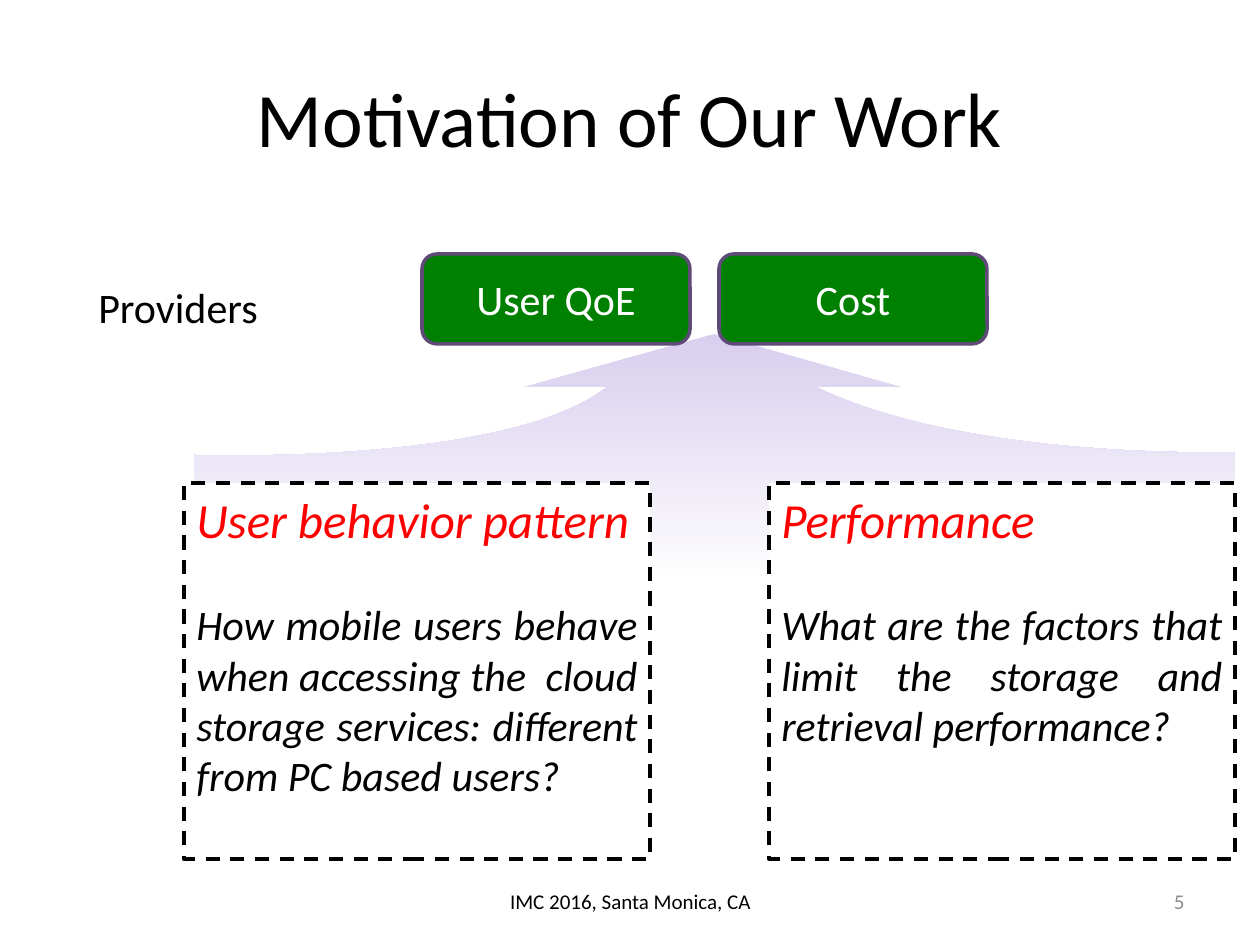
from lxml import etree
from pptx import Presentation
from pptx.dml.color import RGBColor
from pptx.enum.dml import MSO_LINE
from pptx.enum.shapes import MSO_SHAPE
from pptx.enum.text import MSO_ANCHOR, PP_ALIGN
from pptx.oxml.ns import qn
from pptx.util import Pt

SCALE = 914400 / 126  # EMU in one px
LEFT, CENTER, RIGHT, JUSTIFY = (
    PP_ALIGN.LEFT, PP_ALIGN.CENTER, PP_ALIGN.RIGHT, PP_ALIGN.JUSTIFY)
TOP, MIDDLE = MSO_ANCHOR.TOP, MSO_ANCHOR.MIDDLE
RECTANGLE, ROUNDED = MSO_SHAPE.RECTANGLE, MSO_SHAPE.ROUNDED_RECTANGLE
DASH = MSO_LINE.DASH

BLACK = RGBColor(0x00, 0x00, 0x00)
WHITE = RGBColor(0xFF, 0xFF, 0xFF)
GREY = RGBColor(0x8C, 0x8C, 0x8C)
RED = RGBColor(0xFF, 0x00, 0x00)
GREEN = RGBColor(0x00, 0x80, 0x00)
PURPLE = RGBColor(0x5F, 0x4A, 0x78)
LILAC = RGBColor(0xB4, 0x9F, 0xDF)
FONT = "Calibri"

# Content: text, place in px, format
LABELS = [
    ("Motivation of Our Work", (63, 38, 1134, 158), dict(size=44, align=CENTER)),
    ("Providers", (44, 275, 268, 63), dict(size=24, align=CENTER, anchor=TOP)),
    ("IMC 2016, Santa Monica, CA", (431, 876, 399, 50), dict(size=12, align=CENTER)),
    ("5", (903, 876, 294, 50), dict(size=12, align=RIGHT, color=GREY)),
]
GOALS = ["User QoE", "Cost"]
QUESTIONS = [
    ("User behavior pattern",
     "How mobile users behave when accessing the  cloud storage services: "
     "different from PC based users?"),
    ("Performance",
     "What are the factors that limit the storage and retrieval performance?"),
]
GOAL_LEFT, GOAL_TOP, GOAL_WIDTH, GOAL_HEIGHT, GOAL_STEP = 422, 254, 268, 90, 297
CARD_LEFT, CARD_TOP, CARD_WIDTH, CARD_HEIGHT, CARD_STEP = 184, 483, 466, 376, 585

# Arrow outline: tip, two curved sides and a flat base
TIP, LEFT_BARB, RIGHT_BARB = (714, 334), (525, 387), (900, 387)
LEFT_NECK, RIGHT_NECK = (607, 387), (816, 387)
LEFT_SHOULDER, RIGHT_SHOULDER = (194, 455), (1235, 452)
LEFT_BASE, RIGHT_BASE = (194, 582), (1235, 582)


def px(*lengths):
    return [round(length * SCALE) for length in lengths]


def curve(start, first, second, end, steps=32):
    """Points on a cubic curve, without its start."""
    points = []
    for step in range(1, steps + 1):
        t = step / steps
        weights = ((1 - t) ** 3, 3 * t * (1 - t) ** 2, 3 * t ** 2 * (1 - t), t ** 3)
        points.append(tuple(
            sum(weight * value for weight, value in zip(weights, axis))
            for axis in zip(start, first, second, end)))
    return points


def write(box, text, size=24, color=BLACK, align=LEFT, anchor=MIDDLE,
          italic=False, space_after=0, more=False):
    """Write one paragraph; more=True adds it below those already there."""
    frame = box.text_frame
    frame.word_wrap = True
    frame.vertical_anchor = anchor
    para = frame.add_paragraph() if more else frame.paragraphs[0]
    para.alignment = align
    para.space_after = Pt(space_after)
    span = para.add_run()
    span.text = text
    span.font.name = FONT
    span.font.size = Pt(size)
    span.font.italic = italic
    span.font.color.rgb = color


def add_box(page, kind, place, fill, line):
    box = page.shapes.add_shape(kind, *px(*place))
    box.shadow.inherit = False
    box.fill.solid()
    box.fill.fore_color.rgb = fill
    box.line.color.rgb = line
    box.line.width = Pt(2)
    return box


def add_arrow(page):
    outline = [
        LEFT_BARB, LEFT_NECK,
        *curve(LEFT_NECK, (508, 466), LEFT_SHOULDER, LEFT_SHOULDER),
        LEFT_BASE, RIGHT_BASE, RIGHT_SHOULDER,
        *curve(RIGHT_SHOULDER, RIGHT_SHOULDER, (968, 461), RIGHT_NECK),
        RIGHT_BARB,
    ]
    builder = page.shapes.build_freeform(*px(*TIP))
    builder.add_line_segments([px(*point) for point in outline], close=True)
    arrow = builder.convert_to_shape()
    arrow.shadow.inherit = False
    arrow.line.fill.background()
    arrow.fill.gradient()
    arrow.fill.gradient_angle = 270
    for stop, color, position in zip(arrow.fill.gradient_stops, (LILAC, WHITE), (0, 1)):
        stop.color.rgb = color
        stop.position = position
    for color in arrow.fill._xPr.iter(qn("a:srgbClr")):
        etree.SubElement(color, qn("a:alpha"), val="51000")


def main():
    deck = Presentation()
    deck.slide_width, deck.slide_height = px(1260, 945)
    page = deck.slides.add_slide(deck.slide_layouts[6])

    add_arrow(page)

    # Title, side label and footer
    for text, place, style in LABELS:
        write(page.shapes.add_textbox(*px(*place)), text, **style)

    # Goals of the providers
    for index, goal in enumerate(GOALS):
        place = (GOAL_LEFT + index * GOAL_STEP, GOAL_TOP, GOAL_WIDTH, GOAL_HEIGHT)
        box = add_box(page, ROUNDED, place, GREEN, PURPLE)
        write(box, goal, color=WHITE, align=CENTER)

    # Research questions
    for index, (heading, question) in enumerate(QUESTIONS):
        place = (CARD_LEFT + index * CARD_STEP, CARD_TOP, CARD_WIDTH, CARD_HEIGHT)
        box = add_box(page, RECTANGLE, place, WHITE, BLACK)
        box.line.dash_style = DASH
        write(box, heading, size=28, color=RED, anchor=TOP, italic=True, space_after=29)
        write(box, question, align=JUSTIFY, anchor=TOP, italic=True, more=True)

    deck.save("out.pptx")


if __name__ == "__main__":
    main()
